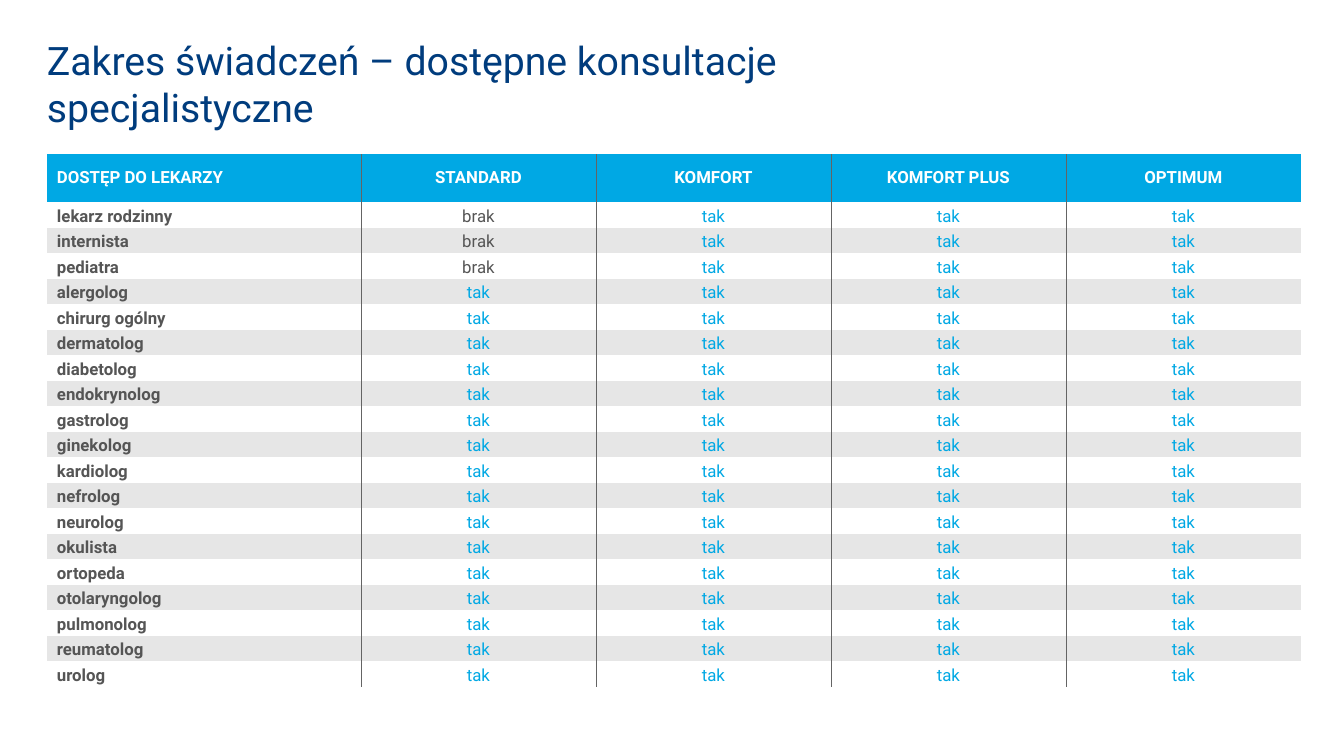
from lxml import etree
from pptx import Presentation
from pptx.dml.color import RGBColor
from pptx.enum.text import MSO_ANCHOR, PP_ALIGN
from pptx.oxml.ns import qn
from pptx.util import Emu, Pt

LEFT, CENTER = PP_ALIGN.LEFT, PP_ALIGN.CENTER
MIDDLE = MSO_ANCHOR.MIDDLE
SCALE = 914400 / 100.8
FONT = "Roboto"
PLAIN = "{2D5ABB26-0587-4C30-8999-92F81FD0307C}"
COLORS = {"navy": "003C7D", "blue": "00A8E4", "white": "FFFFFF",
          "text": "555555", "band": "E6E6E6", "rule": "646464"}

TITLE = "Zakres świadczeń – dostępne konsultacje specjalistyczne"
HEADS = ["DOSTĘP DO LEKARZY", "STANDARD", "KOMFORT", "KOMFORT PLUS", "OPTIMUM"]
DOCTORS = ["lekarz rodzinny", "internista", "pediatra", "alergolog",
           "chirurg ogólny", "dermatolog", "diabetolog", "endokrynolog",
           "gastrolog", "ginekolog", "kardiolog", "nefrolog", "neurolog",
           "okulista", "ortopeda", "otolaryngolog", "pulmonolog",
           "reumatolog", "urolog"]
LACKING = DOCTORS[:3]  # not covered by STANDARD

FIRST_W, PLAN_W = 314, 235
HEAD_H, BODY_H = 48, 485
HEAD_PAD, BODY_PAD = (10, 4), (2, 0)


def px(n):
    return Emu(round(n * SCALE))


def rgb(name):
    return RGBColor.from_string(COLORS[name])


def apply(item, values):
    for key, value in values.items():
        setattr(item, key, value)


def margins(side, top):
    return {"margin_left": px(side), "margin_right": px(side),
            "margin_top": px(top), "margin_bottom": px(top)}


def write(frame, text, size, color, bold=False, align=LEFT):
    para = frame.paragraphs[0]
    para.alignment = align
    run = para.add_run()
    run.text = text
    apply(run.font, {"name": FONT, "size": Pt(size), "bold": bold})
    run.font.color.rgb = rgb(color)
    return para


def add_title(slide):
    box = slide.shapes.add_textbox(px(47), px(54), px(954), px(59))
    frame = box.text_frame
    apply(frame, {"word_wrap": True, "vertical_anchor": MIDDLE, **margins(0, 0)})
    write(frame, TITLE, 28, "navy")


def add_rule(cell, side):
    line = etree.SubElement(cell._tc.get_or_add_tcPr(), qn(f"a:{side}"), w=str(Pt(0.5)))
    fill = etree.SubElement(line, qn("a:solidFill"))
    etree.SubElement(fill, qn("a:srgbClr"), val=COLORS["rule"])


def style_cell(cell, col, fill, pad):
    apply(cell, {"vertical_anchor": MIDDLE, **margins(*pad)})
    # Rules run only between columns
    if col > 0:
        add_rule(cell, "lnL")
    if col < len(HEADS) - 1:
        add_rule(cell, "lnR")
    if fill:
        cell.fill.solid()
        cell.fill.fore_color.rgb = rgb(fill)
    else:
        cell.fill.background()


def fill_head(table):
    for col, text in enumerate(HEADS):
        cell = table.cell(0, col)
        style_cell(cell, col, "blue", HEAD_PAD)
        write(cell.text_frame, text, 12, "white", True, CENTER if col else LEFT)


def fill_row(table, row, doctor):
    first = "brak" if doctor in LACKING else "tak"
    for col, text in enumerate([doctor, first, "tak", "tak", "tak"]):
        cell = table.cell(row, col)
        style_cell(cell, col, None if row % 2 else "band", BODY_PAD)
        para = write(cell.text_frame, text, 12, "blue" if text == "tak" else "text",
                     col == 0, CENTER if col else LEFT)
        para.line_spacing = 1.15
        if col == 0:
            para._p.get_or_add_pPr().set("marL", str(px(8)))


def add_plans(slide):
    width = FIRST_W + PLAN_W * (len(HEADS) - 1)
    frame = slide.shapes.add_table(len(DOCTORS) + 1, len(HEADS), px(47), px(154),
                                   px(width), px(HEAD_H + BODY_H))
    table = frame.table
    table._tbl.tblPr.find(qn("a:tableStyleId")).text = PLAIN
    apply(table, {"first_row": True, "horz_banding": False})
    for col, part in enumerate(table.columns):
        part.width = px(PLAN_W if col else FIRST_W)
    for row, part in enumerate(table.rows):
        part.height = px(BODY_H / len(DOCTORS) if row else HEAD_H)
    fill_head(table)
    for row, doctor in enumerate(DOCTORS, 1):
        fill_row(table, row, doctor)


def main():
    deck = Presentation()
    apply(deck, {"slide_width": px(1344), "slide_height": px(756)})
    slide = deck.slides.add_slide(deck.slide_layouts[6])
    add_title(slide)
    add_plans(slide)
    deck.save("out.pptx")


if __name__ == "__main__":
    main()
